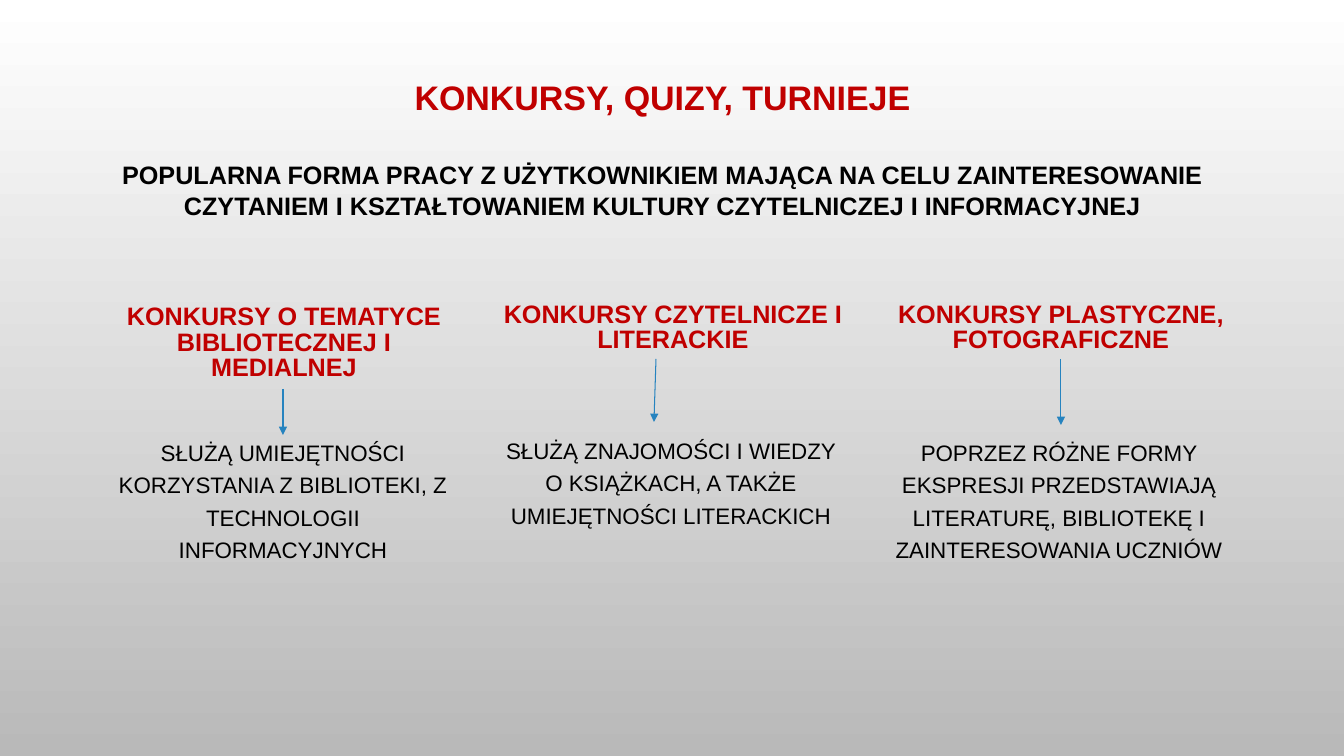
from dataclasses import dataclass

from lxml.etree import SubElement
from pptx import Presentation
from pptx.dml.color import RGBColor as Rgb
from pptx.enum.shapes import MSO_CONNECTOR as Link
from pptx.enum.text import MSO_ANCHOR as Anchor, PP_ALIGN as Align
from pptx.oxml.ns import qn
from pptx.util import Emu, Pt


@dataclass(frozen=True)
class Theme:
    red: str = "C00000"
    black: str = "000000"
    blue: str = "2683BF"
    light: str = "FFFFFF"
    dark: str = "B9B9B9"
    font: str = "Arial"
    title: float = 24.3
    head: float = 18
    body: float = 16
    line: float = 0.75


def px(n):
    return Emu(round(n * 914400 / 100.8))


class Deck:
    def __init__(self, theme):
        self.theme = theme
        self.file = Presentation()
        self.file.slide_width = px(1344)
        self.file.slide_height = px(756)
        self.slide = self.file.slides.add_slide(self.file.slide_layouts[6])

    def back(self):
        fill = self.slide.background.fill
        fill.gradient()
        fill.gradient_angle = 270
        for stop, tone in zip(fill.gradient_stops, (self.theme.light, self.theme.dark)):
            stop.color.rgb = Rgb.from_string(tone)

    def box(self, x, y, w, h, anchor, top=5):
        shape = self.slide.shapes.add_textbox(px(x), px(y), px(w), px(h))
        frame = shape.text_frame
        frame.word_wrap = True
        frame.vertical_anchor = anchor
        frame.margin_top = px(top)
        return shape

    def style(self, para, size, tone, bold, space):
        para.alignment = Align.CENTER
        para.line_spacing = space
        for run in para.runs:
            run.font.name = self.theme.font
            run.font.size = Pt(size)
            run.font.bold = bold
            run.font.color.rgb = Rgb.from_string(tone)

    def title(self, name, lead):
        look = self.theme
        frame = self.box(101, 68, 1142, 177, Anchor.TOP, 9).text_frame
        frame.text = f"{name}\n{lead}"
        first, last = frame.paragraphs
        self.style(first, look.title, look.red, True, 1.0)
        self.style(last, look.head, look.black, True, 1.0)
        first.space_after = Pt(30)
        first._p.get_or_add_pPr().set("marR", str(px(19)))

    def head(self, text, x, y, h):
        shape = self.box(x, y, 364, h, Anchor.BOTTOM)
        shape.text_frame.text = text
        self.style(shape.text_frame.paragraphs[0], self.theme.head, self.theme.red, True, 0.85)
        return shape

    def body(self, text, x, y):
        shape = self.box(x, y, 364, 297, Anchor.TOP, 45)
        shape.text_frame.text = text
        self.style(shape.text_frame.paragraphs[0], self.theme.body, self.theme.black, False, 1.2)
        return shape

    def arrow(self, start, end):
        line = self.slide.shapes.add_connector(Link.STRAIGHT, *map(px, start + end))
        line.line.color.rgb = Rgb.from_string(self.theme.blue)
        line.line.width = Pt(self.theme.line)
        SubElement(line.line._get_or_add_ln(), qn("a:tailEnd"), type="triangle")
        SubElement(line._element.spPr, qn("a:effectLst"))
        return line

    def save(self):
        self.file.save("out.pptx")


def main():
    deck = Deck(Theme())
    deck.back()
    deck.title(
        "KONKURSY, QUIZY, TURNIEJE",
        "POPULARNA FORMA PRACY Z UŻYTKOWNIKIEM MAJĄCA NA CELU ZAINTERESOWANIE "
        "CZYTANIEM I KSZTAŁTOWANIEM KULTURY CZYTELNICZEJ I INFORMACYJNEJ",
    )

    deck.head("KONKURSY O TEMATYCE BIBLIOTECZNEJ I MEDIALNEJ", 102, 292, 95)
    skills = deck.body(
        "SŁUŻĄ UMIEJĘTNOŚCI KORZYSTANIA Z BIBLIOTEKI, Z TECHNOLOGII INFORMACYJNYCH", 101, 389
    )
    deck.head("KONKURSY CZYTELNICZE I LITERACKIE", 491, 295, 64)
    deck.body("SŁUŻĄ ZNAJOMOŚCI I WIEDZY O KSIĄŻKACH, A TAKŻE UMIEJĘTNOŚCI LITERACKICH", 489, 387)
    arts = deck.head("KONKURSY PLASTYCZNE, FOTOGRAFICZNE", 879, 295, 64)
    deck.body(
        "POPRZEZ RÓŻNE FORMY EKSPRESJI PRZEDSTAWIAJĄ LITERATURĘ, BIBLIOTEKĘ I "
        "ZAINTERESOWANIA UCZNIÓW", 877, 389
    )

    deck.arrow((656, 359), (654, 422))
    deck.arrow((1061, 359), (1061, 425)).begin_connect(arts, 2)
    deck.arrow((283, 389), (283, 435)).begin_connect(skills, 0)
    deck.save()


if __name__ == "__main__":
    main()
